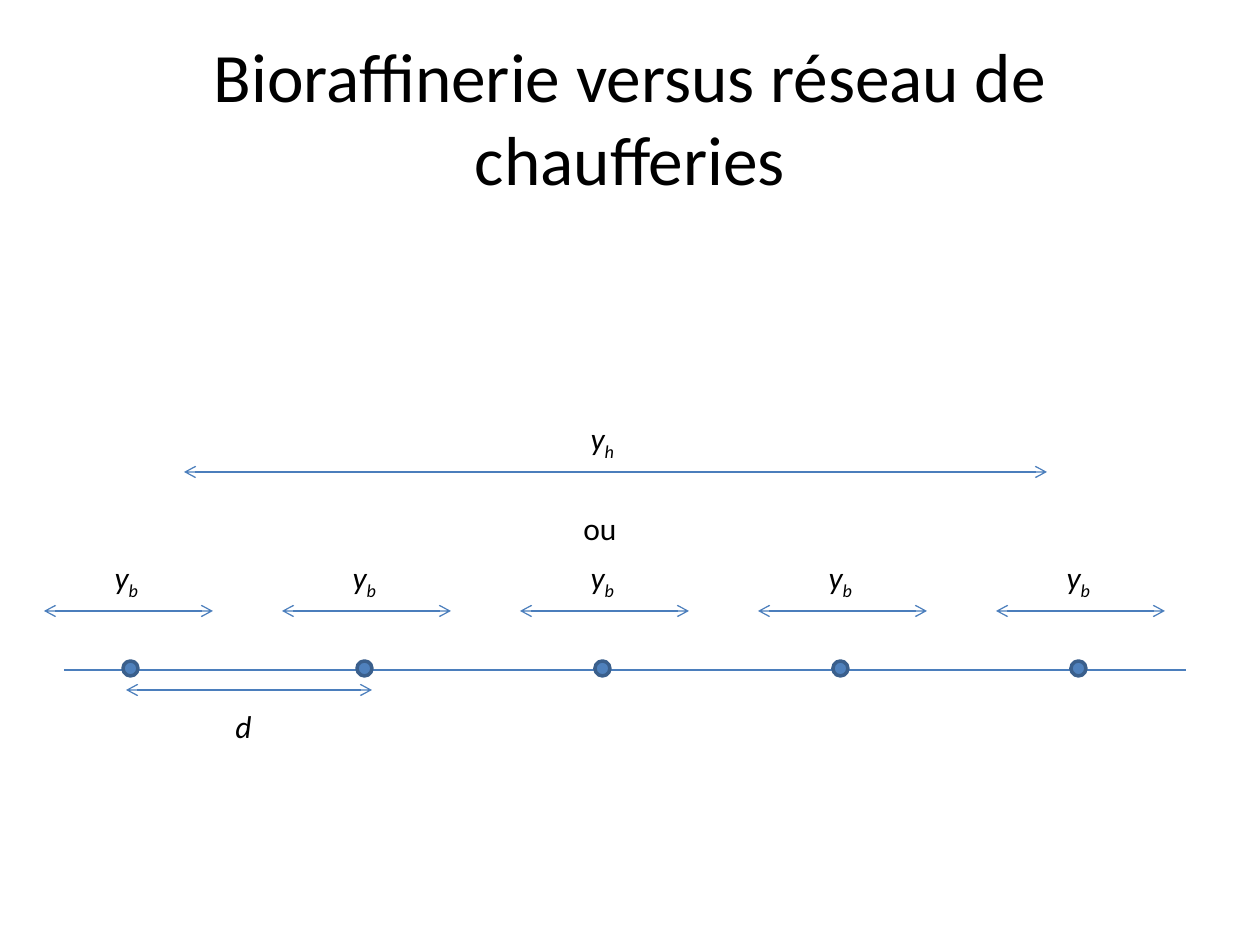
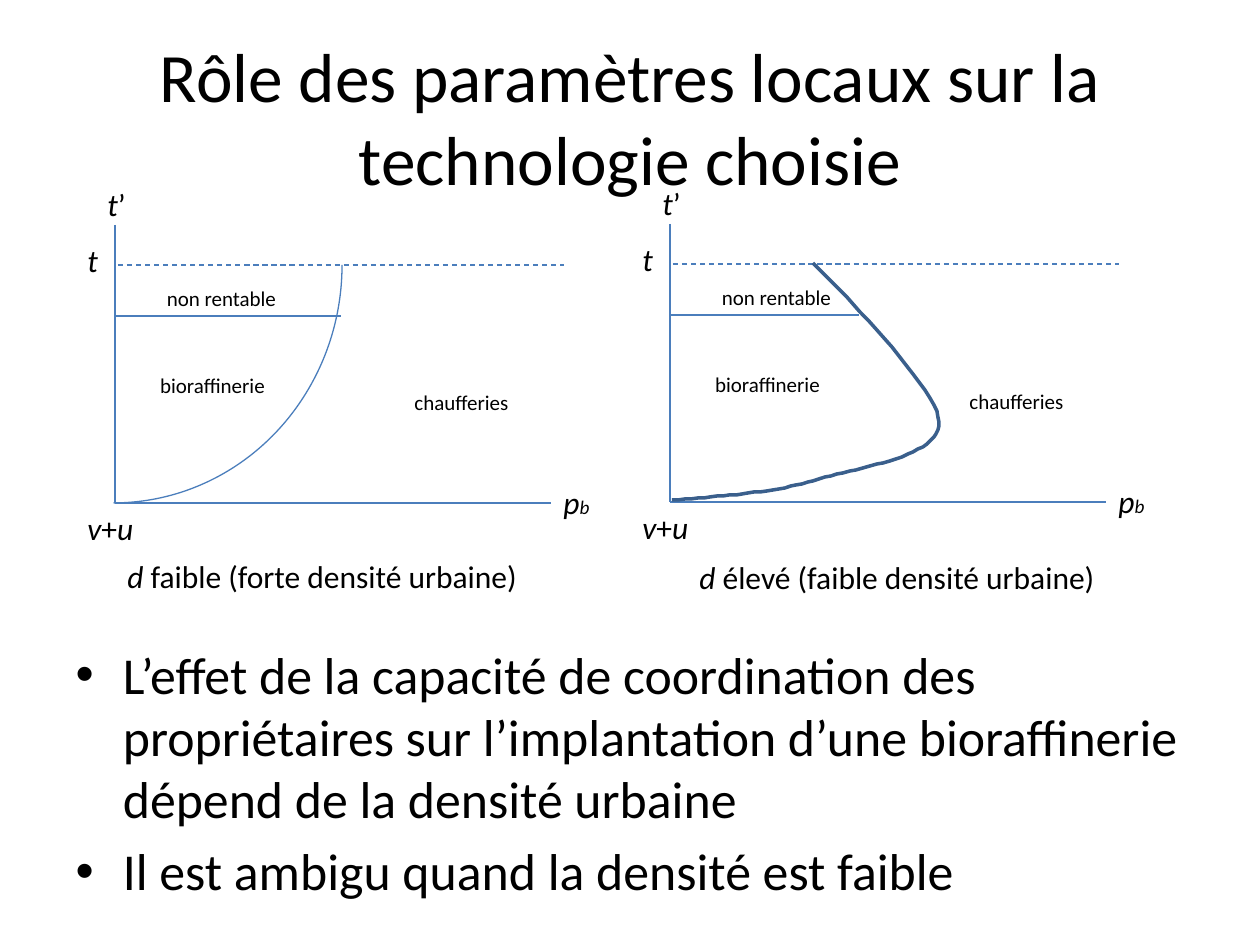
from lxml import etree
from pptx import Presentation
from pptx.dml.color import RGBColor
from pptx.enum.dml import MSO_LINE
from pptx.enum.shapes import MSO_CONNECTOR, MSO_SHAPE
from pptx.enum.text import MSO_ANCHOR, MSO_AUTO_SIZE, PP_ALIGN
from pptx.oxml.ns import qn
from pptx.util import Emu, Pt

STRAIGHT = MSO_CONNECTOR.STRAIGHT
DOT, ARC = MSO_SHAPE.FLOWCHART_CONNECTOR, MSO_SHAPE.ARC
DASH = MSO_LINE.DASH
LEFT, CENTER = PP_ALIGN.LEFT, PP_ALIGN.CENTER
MIDDLE = MSO_ANCHOR.MIDDLE
NO_FIT = MSO_AUTO_SIZE.NONE

SCALE = 914400 / 126  # EMU in one px
FONT = "Calibri"
BLACK, BLUE, FILL, DARK = "000000", "4B7EBC", "4F81BD", "3A5F8C"
THIN, THICK = 0.75, 2
TITLE_ONLY, TITLE_BODY = 5, 1

PITCH = 238
DOTS = [123, 357, 595, 833, 1071]
BEND = [
    (672, 500),
    (723, 496), (775, 493), (819, 479),
    (863, 466), (940, 457), (939, 422),
    (939, 386), (813, 263), (813, 263),
]


def px(*values):
    return [Emu(round(value * SCALE)) for value in values]


def color(code):
    return RGBColor.from_string(code)


def style_font(para, size, align=LEFT):
    para.alignment = align
    para.font.name = FONT
    para.font.size = Pt(size)
    para.font.color.rgb = color(BLACK)


def style_line(line, code, width):
    line.color.rgb = color(code)
    line.width = Pt(width)


def place(shape, left, top, width, height):
    shape.left, shape.top, shape.width, shape.height = px(
        left, top, width, height)


def add_slide(deck, layout, title):
    slide = deck.slides.add_slide(deck.slide_layouts[layout])
    head = slide.shapes.title
    place(head, 63, 38, 1134, 157)
    frame = head.text_frame
    frame.text = title
    frame.auto_size = NO_FIT
    frame.vertical_anchor = MIDDLE
    style_font(frame.paragraphs[0], 39.6, CENTER)
    return slide


def add_text(slide, box, parts, size=18, align=LEFT):
    """Parts are (text, style) pairs: "" upright, "i" italic,
    "sub" lowered italic, "small" small italic."""
    frame = slide.shapes.add_textbox(*px(*box)).text_frame
    frame.word_wrap = True
    para = frame.paragraphs[0]
    style_font(para, size, align)
    for text, style in parts:
        run = para.add_run()
        run.text = text
        run.font.italic = style != ""
        if style == "sub":
            run._r.get_or_add_rPr().set("baseline", "-25000")
        elif style == "small":
            run.font.size = Pt(11)


def add_line(slide, x1, y1, x2, y2, dash=False, arrows=False):
    link = slide.shapes.add_connector(STRAIGHT, *px(x1, y1, x2, y2))
    style_line(link.line, BLUE, THIN)
    if dash:
        link.line.dash_style = DASH
    props = link._element.spPr
    if arrows:
        for end in ("a:headEnd", "a:tailEnd"):
            tip = etree.SubElement(props.find(qn("a:ln")), qn(end))
            tip.set("type", "arrow")
    etree.SubElement(props, qn("a:effectLst"))


def add_dot(slide, left, top):
    dot = slide.shapes.add_shape(DOT, *px(left, top, 15, 15))
    dot.shadow.inherit = False
    dot.fill.solid()
    dot.fill.fore_color.rgb = color(FILL)
    style_line(dot.line, DARK, THICK)


def add_arc(slide, box):
    """Quarter arc from the bottom to the right side of the box."""
    arc = slide.shapes.add_shape(ARC, *px(*box))
    arc.shadow.inherit = False
    arc.fill.background()
    arc._element.spPr.find(qn("a:xfrm")).set("flipV", "1")
    style_line(arc.line, BLUE, THIN)


def trace(knots, steps=24):
    """Points along joined cubic curves."""
    points = []
    for i in range(0, len(knots) - 1, 3):
        for step in range(1, steps + 1):
            t = step / steps
            u = 1 - t
            share = (u ** 3, 3 * u * u * t, 3 * u * t * t, t ** 3)
            points.append(tuple(
                sum(w * knot[axis] for w, knot in zip(share, knots[i:i + 4]))
                for axis in (0, 1)))
    return points


def add_curve(slide, knots):
    path = slide.shapes.build_freeform(*knots[0], scale=SCALE)
    path.add_line_segments(trace(knots), close=False)
    curve = path.convert_to_shape()
    curve.shadow.inherit = False
    curve.fill.background()
    style_line(curve.line, DARK, THICK)


def add_span(slide, x1, x2, y, left, index):
    """Double arrow with y and its index above."""
    add_line(slide, x1, y, x2, y, arrows=True)
    add_text(slide, (left, y - 59, 69, 50),
             [(" ", ""), ("y", "i"), (index, "sub")])


def add_plot(slide, x, y, limit):
    """Axes, thresholds and zone names around the origin (x, y)."""
    add_line(slide, x, y - 278, x, y)
    add_line(slide, x, y, x + 436, y)
    add_line(slide, x + 3, y - 238, x + 449, y - 238, dash=True)
    add_line(slide, x, y - 187, x + limit, y - 187)
    signs = [
        (-20, -324, [("t", "i"), ("’", "")]),
        (-40, -268, [("t", "i")]),
        (436, -26, [("p", "i"), ("b", "small")]),
        (-40, 0, [("v", "i"), ("+", ""), ("u", "i")]),
    ]
    for dx, dy, parts in signs:
        add_text(slide, (x + dx, y + dy, 79, 50), parts)
    zones = [
        (37, -224, "non rentable"),
        (277, -120, "chaufferies"),
        (28, -137, "bioraffinerie"),
    ]
    for dx, dy, name in zones:
        add_text(slide, (x + dx, y + dy, 139, 38), [(name, "")], 12, CENTER)


def add_body(slide, lines):
    body = slide.placeholders[1]
    place(body, 63, 636, 1134, 262)
    frame = body.text_frame
    frame.text = "\n".join(lines)
    frame.auto_size = NO_FIT
    for para in frame.paragraphs:
        style_font(para, 29.6)


def draw_network(deck):
    slide = add_slide(deck, TITLE_ONLY,
                      "Bioraffinerie versus réseau de chaufferies")
    add_line(slide, 64, 670, 1186, 670)
    for i, left in enumerate(DOTS):
        shift = i * PITCH
        add_dot(slide, left, 661)
        add_span(slide, 44 + shift, 213 + shift, 611, 95 + shift, "b")
    add_line(slide, 126, 690, 372, 690, arrows=True)
    add_text(slide, (223, 701, 126, 50), [("d", "i")])
    add_span(slide, 184, 1047, 472, 571, "h")
    add_text(slide, (571, 503, 69, 50), [("ou", "")])


def draw_choice(deck):
    slide = add_slide(deck, TITLE_BODY,
                      "Rôle des paramètres locaux sur la technologie choisie")
    add_body(slide, [
        "L’effet de la capacité de coordination des propriétaires sur "
        "l’implantation d’une bioraffinerie dépend de la densité urbaine",
        "Il est ambigu quand la densité est faible",
    ])
    add_plot(slide, 115, 503, 226)
    add_arc(slide, (-115, 27, 457, 476))
    add_plot(slide, 670, 502, 189)
    add_curve(slide, BEND)
    notes = [
        (115, 551, " faible (forte densité urbaine)"),
        (687, 552, " élevé (faible densité urbaine)"),
    ]
    for left, top, text in notes:
        add_text(slide, (left, top, 438, 50), [("d", "i"), (text, "")])


def main():
    deck = Presentation()
    deck.slide_width, deck.slide_height = px(1260, 945)
    draw_network(deck)
    draw_choice(deck)
    deck.save("out.pptx")


if __name__ == "__main__":
    main()
